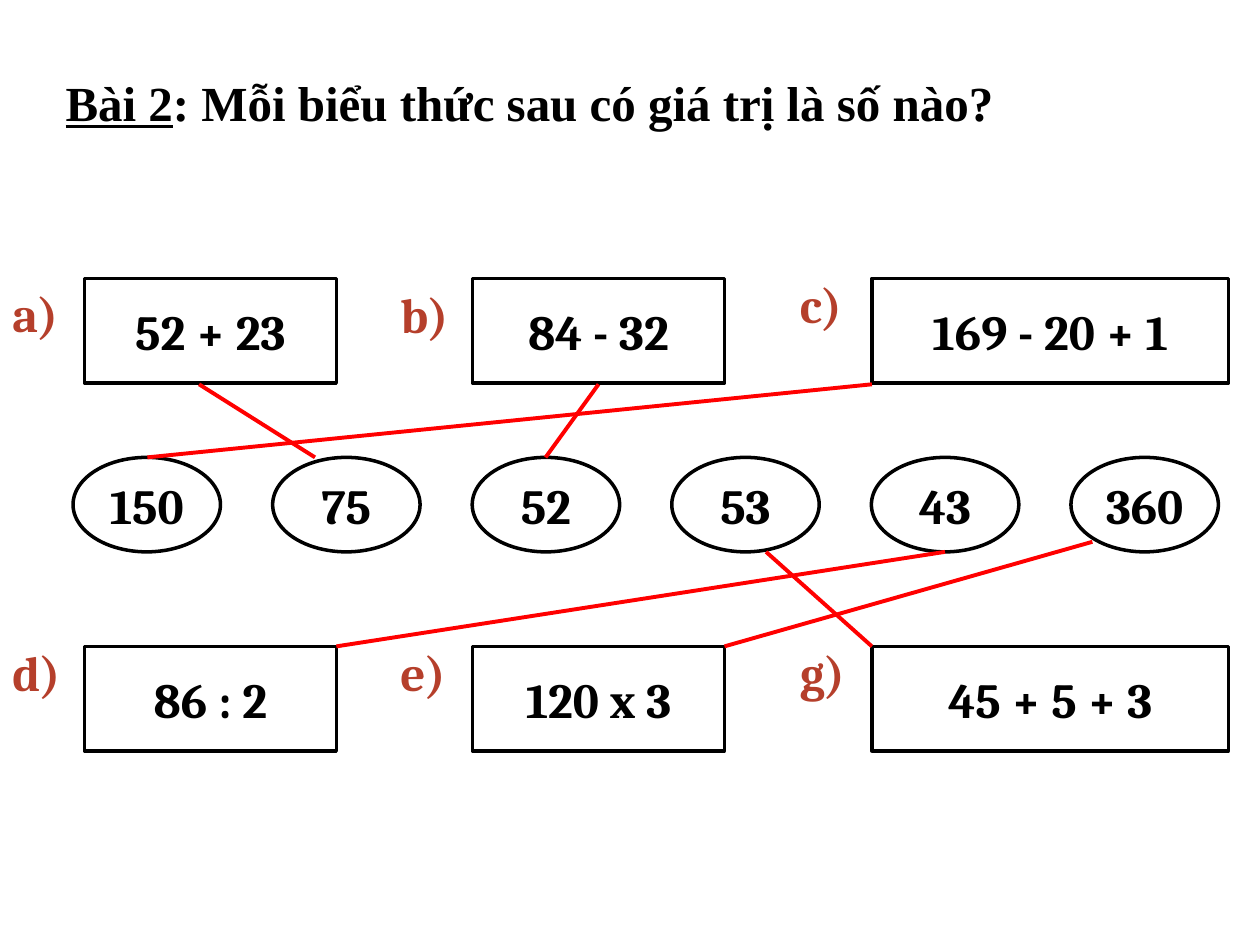
from dataclasses import dataclass

from lxml import etree
from pptx import Presentation
from pptx.dml.color import RGBColor
from pptx.enum.shapes import MSO_CONNECTOR, MSO_SHAPE
from pptx.enum.text import MSO_ANCHOR, PP_ALIGN
from pptx.oxml.ns import qn
from pptx.util import Inches, Pt

RECTANGLE = MSO_SHAPE.RECTANGLE
OVAL = MSO_SHAPE.OVAL
STRAIGHT = MSO_CONNECTOR.STRAIGHT
MIDDLE = MSO_ANCHOR.MIDDLE
TOP = MSO_ANCHOR.TOP
LEFT = PP_ALIGN.LEFT
CENTER = PP_ALIGN.CENTER


@dataclass(frozen=True)
class Theme:
    ink: RGBColor = RGBColor(0, 0, 0)
    paper: RGBColor = RGBColor(255, 255, 255)
    label: RGBColor = RGBColor(0xB5, 0x3F, 0x2B)
    match: RGBColor = RGBColor(255, 0, 0)
    title_font: str = "Times New Roman"
    body_font: str = "Cambria"
    text_size: Pt = Pt(28)
    outline: Pt = Pt(2)
    match_line: Pt = Pt(2.25)


class SlideBuilder:
    def __init__(self, slide, theme):
        self.slide = slide
        self.theme = theme

    def set_text(self, shape, parts, color, font_name, alignment, anchor, wrap):
        frame = shape.text_frame
        frame.word_wrap = wrap
        frame.vertical_anchor = anchor
        paragraph = frame.paragraphs[0]
        paragraph.alignment = alignment
        for text, underline in parts:
            run = paragraph.add_run()
            run.text = text
            run.font.color.rgb = color
            formats = {"name": font_name, "size": self.theme.text_size,
                       "bold": True, "underline": underline}
            for name, value in formats.items():
                setattr(run.font, name, value)

    def title(self, parts, left, top, width, height):
        shape = self.slide.shapes.title
        places = {"left": left, "top": top, "width": width, "height": height}
        for name, value in places.items():
            setattr(shape, name, Inches(value))
        self.set_text(shape, parts, self.theme.ink, self.theme.title_font, LEFT, MIDDLE, True)

    def label(self, text, left, top):
        shape = self.slide.shapes.add_textbox(
            Inches(left), Inches(top), Inches(0.75), Inches(0.57))
        self.set_text(shape, [(text, False)], self.theme.label, self.theme.body_font,
                      LEFT, TOP, True)

    def box(self, kind, text, left, top, width, height):
        shape = self.slide.shapes.add_shape(
            kind, Inches(left), Inches(top), Inches(width), Inches(height))
        shape.shadow.inherit = False
        shape.fill.solid()
        shape.fill.fore_color.rgb = self.theme.paper
        shape.line.color.rgb = self.theme.ink
        shape.line.width = self.theme.outline
        self.set_text(shape, [(text, False)], self.theme.ink, self.theme.body_font,
                      CENTER, MIDDLE, False)

    def match(self, start, end):
        connector = self.slide.shapes.add_connector(
            STRAIGHT, *[Inches(value) for value in start + end])
        connector.line.color.rgb = self.theme.match
        connector.line.width = self.theme.match_line
        properties = connector._element.find(qn("p:spPr"))
        etree.SubElement(properties, qn("a:effectLst"))


def main():
    presentation = Presentation()
    presentation.slide_width = Inches(10)
    presentation.slide_height = Inches(7.5)
    slide = presentation.slides.add_slide(presentation.slide_layouts[5])
    builder = SlideBuilder(slide, Theme())

    builder.title([("Bài 2", True), (": Mỗi biểu thức sau có giá trị là số nào?", False)],
                  0.42, 0.52, 9.75, 0.57)

    columns = [(0, 0.67, 2), (3.08, 3.75, 2), (6.25, 6.92, 2.83)]
    rows = [
        (2.21, [("a)", "52 + 23", 2.2), ("b)", "84 - 32", 2.21), ("c)", "169 - 20 + 1", 2.13)]),
        (5.13, [("d)", "86 : 2", 5.05), ("e)", "120 x 3", 5.05), ("g)", "45 + 5 + 3", 5.05)]),
    ]
    for top, expressions in rows:
        for (label_left, left, width), (label, expression, label_top) in zip(columns, expressions):
            builder.box(RECTANGLE, expression, left, top, width, 0.83)
            builder.label(label, label_left, label_top)

    first_left, last_left = 0.58, 8.5
    answers = ["150", "75", "52", "53", "43", "360"]
    step = (last_left - first_left) / (len(answers) - 1)
    for index, answer in enumerate(answers):
        builder.box(OVAL, answer, first_left + index * step, 3.63, 1.17, 0.75)

    matches = [
        ((1.58, 3.05), (2.5, 3.63)),
        ((4.75, 3.05), (4.33, 3.63)),
        ((6.92, 3.05), (1.17, 3.63)),
        ((2.67, 5.13), (7.5, 4.38)),
        ((5.75, 5.13), (8.67, 4.3)),
        ((6.08, 4.38), (6.92, 5.13)),
    ]
    for start, end in matches:
        builder.match(start, end)

    presentation.save("out.pptx")


if __name__ == "__main__":
    main()
